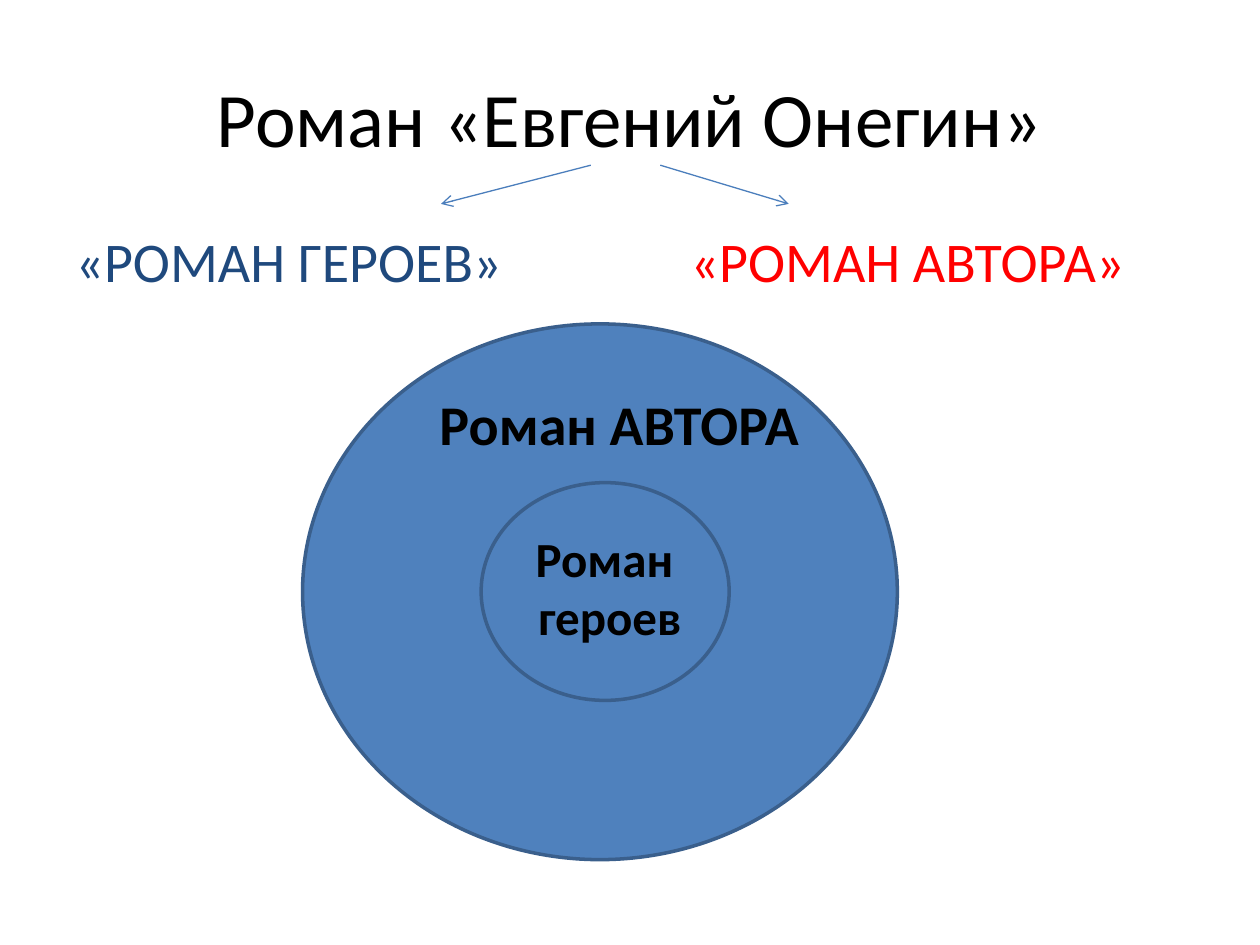
from lxml import etree
from pptx import Presentation
from pptx import util as u
from pptx.dml.color import RGBColor
from pptx.enum import shapes, text
from pptx.oxml.ns import qn

THEME = {
    "font": "Calibri",
    "black": "000000", "navy": "1F497D", "red": "FF0000",
    "fill": "4F81BD", "outline": "3A5F8C", "arrow": "4B7EBC",
    "title": 44, "large": 32, "small": 28,
}


def add_run(p, words, size, color, bold=False):
    r = p.add_run()
    r.text = words
    r.font.name = THEME["font"]
    r.font.size = u.Pt(THEME[size])
    r.font.bold = bold
    r.font.color.rgb = RGBColor.from_string(THEME[color])


def add_text_box(s, left, top, width, height):
    box = s.shapes.add_textbox(u.Cm(left), u.Cm(top), u.Cm(width), u.Cm(height))
    box.text_frame.word_wrap = True
    return box.text_frame


prs = Presentation()
prs.slide_width, prs.slide_height = u.Cm(25.4), u.Cm(19.05)
s = prs.slides.add_slide(prs.slide_layouts[5])

# Title
title = s.shapes.title
title.left, title.top = u.Cm(1.27), u.Cm(0.76)
title.width, title.height = u.Cm(22.86), u.Cm(3.18)
tf = title.text_frame
tf.vertical_anchor = text.MSO_ANCHOR.MIDDLE
p = tf.paragraphs[0]
p.alignment = text.PP_ALIGN.CENTER
add_run(p, "Роман «Евгений Онегин»", "title", "black")

# Two branches on one line, the second at a tab stop
p = add_text_box(s, 1.27, 4.45, 22.86, 12.57).paragraphs[0]
add_run(p, "«РОМАН ГЕРОЕВ»\t", "large", "navy")
add_run(p, "«РОМАН АВТОРА»", "large", "red")
tabs = etree.SubElement(p._p.get_or_add_pPr(), qn("a:tabLst"))
etree.SubElement(tabs, qn("a:tab"), pos=str(u.Cm(12.4)), algn="l")

# Nested circles: the author's novel around the heroes' novel
for left, top, width, height in [(6.1, 6.53, 11.99, 10.8), (9.7, 9.73, 5, 4.39)]:
    sp = s.shapes.add_shape(shapes.MSO_SHAPE.OVAL, u.Cm(left), u.Cm(top),
                            u.Cm(width), u.Cm(height))
    sp.shadow.inherit = False
    sp.fill.solid()
    sp.fill.fore_color.rgb = RGBColor.from_string(THEME["fill"])
    sp.line.color.rgb = RGBColor.from_string(THEME["outline"])
    sp.line.width = u.Pt(2)

# Circle labels
labels = [
    (["Роман ", "героев"], "small", (10.49, 10.52, 3.61, 2.64)),
    (["Роман АВТОРА"], "large", (7.29, 7.72, 10.39, 1.63)),
]
for lines, size, place in labels:
    tf = add_text_box(s, *place)
    for i, words in enumerate(lines):
        p = tf.add_paragraph() if i else tf.paragraphs[0]
        p.alignment = text.PP_ALIGN.CENTER
        add_run(p, words, size, "black", bold=True)

# Arrows from the title to the branches
for start, end in [(11.91, 8.89), (13.31, 15.9)]:
    arrow = s.shapes.add_connector(shapes.MSO_CONNECTOR.STRAIGHT, u.Cm(start),
                                   u.Cm(3.33), u.Cm(end), u.Cm(4.11))
    arrow.line.color.rgb = RGBColor.from_string(THEME["arrow"])
    arrow.line.width = u.Pt(0.75)
    etree.SubElement(arrow.line._get_or_add_ln(), qn("a:tailEnd"), type="arrow")
    etree.SubElement(arrow._element.spPr, qn("a:effectLst"))

prs.save("out.pptx")
